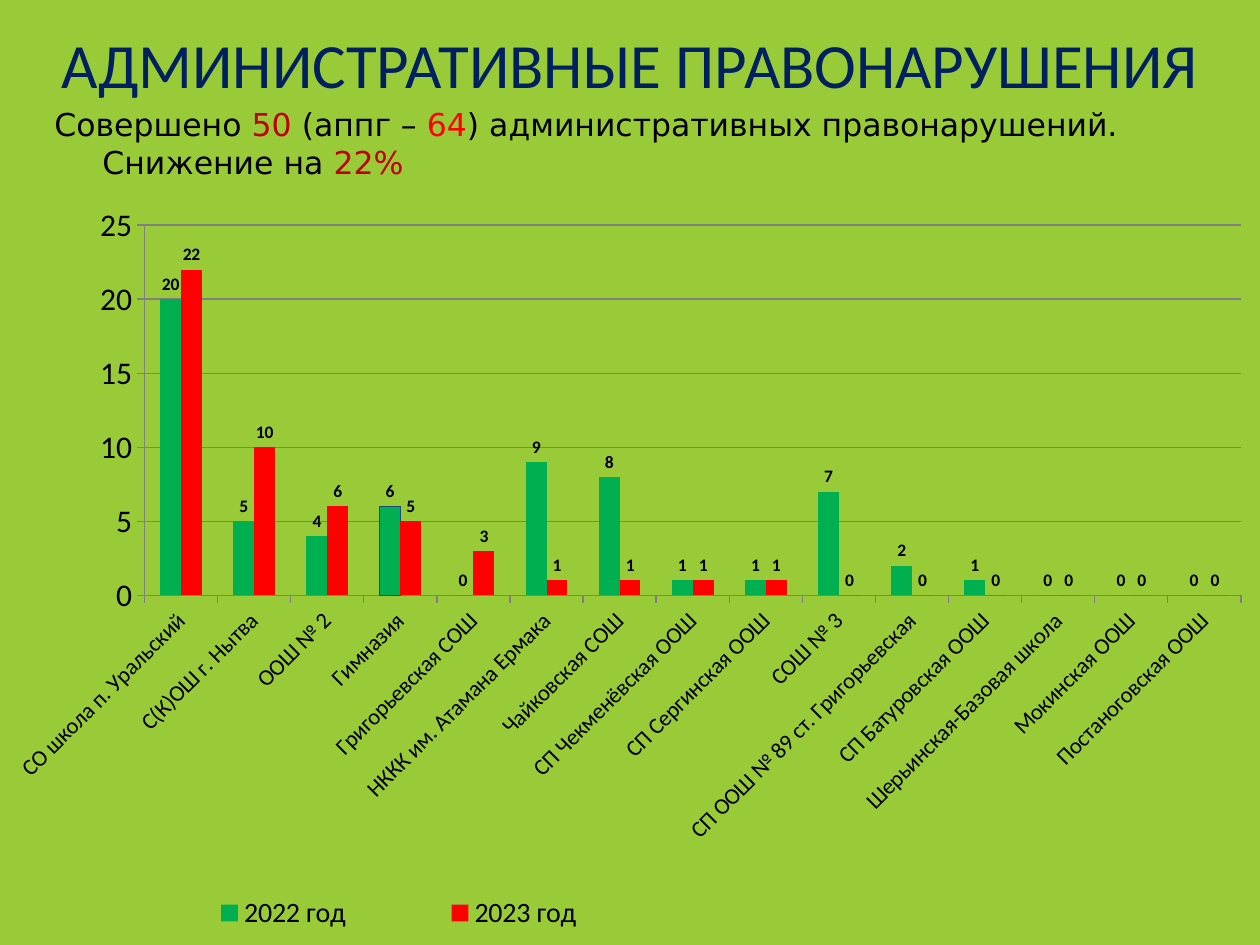
from dataclasses import dataclass

from lxml.etree import SubElement
from pptx import Presentation
from pptx.chart.data import CategoryChartData
from pptx.dml.color import RGBColor
from pptx.enum.chart import (XL_CHART_TYPE, XL_LABEL_POSITION,
                             XL_LEGEND_POSITION, XL_TICK_MARK)
from pptx.enum.text import MSO_ANCHOR, MSO_AUTO_SIZE, PP_ALIGN
from pptx.oxml import parse_xml
from pptx.oxml.ns import nsdecls, qn
from pptx.util import Pt

PX = 914400 / 126


@dataclass(frozen=True)
class Theme:
    """Colours, fonts and type sizes of the slide."""
    background: str = "99CB38"
    title: str = "002060"
    text: str = "000000"
    accent: str = "C00000"
    previous: str = "00B050"
    current: str = "FF0000"
    axis: str = "808080"
    outline: str = "1F497D"
    heading_font: str = "Calibri"
    body_font: str = "DejaVu Sans"
    title_size: int = 36
    body_size: int = 18
    legend_size: int = 16
    category_size: int = 13
    label_size: int = 10


THEME = Theme()

SCHOOLS = [
    ("СО школа п. Уральский", 20, 22),
    ("С(К)ОШ г. Нытва", 5, 10),
    ("ООШ № 2", 4, 6),
    ("Гимназия", 6, 5),
    ("Григорьевская СОШ", 0, 3),
    ("НККК им. Атамана Ермака", 9, 1),
    ("Чайковская СОШ", 8, 1),
    ("СП Чекменёвская ООШ", 1, 1),
    ("СП Сергинская ООШ", 1, 1),
    ("СОШ № 3", 7, 0),
    ("СП ООШ № 89 ст. Григорьевская", 2, 0),
    ("СП Батуровская ООШ", 1, 0),
    ("Шерьинская-Базовая школа", 0, 0),
    ("Мокинская ООШ", 0, 0),
    ("Постаноговская ООШ", 0, 0),
]


def px(*lengths):
    """Turn pixel lengths into EMU."""
    return [round(length * PX) for length in lengths]


def style_font(font, size, color=THEME.text, name=THEME.heading_font, bold=False):
    """Set the face, size, weight and colour of a font."""
    font.name, font.size, font.bold = name, Pt(size), bold
    font.color.rgb = RGBColor.from_string(color)


def fill_solid(fill, color):
    """Fill with one colour."""
    fill.solid()
    fill.fore_color.rgb = RGBColor.from_string(color)


def place_part(parent, index, x, y, width, height, inner=False):
    """Give a chart part a manual layout in fractions of the chart."""
    for old in parent.findall(qn("c:layout")):
        parent.remove(old)
    layout = parse_xml(f"<c:layout {nsdecls('c')}><c:manualLayout/></c:layout>")
    settings = [("layoutTarget", "inner")] if inner else []
    settings += [("xMode", "edge"), ("yMode", "edge"),
                 ("x", x), ("y", y), ("w", width), ("h", height)]
    for tag, value in settings:
        SubElement(layout[0], qn(f"c:{tag}")).set("val", str(value))
    parent.insert(index, layout)


def build_title(slide, box):
    """Place the title in its placeholder."""
    title = slide.shapes.title
    title.left, title.top, title.width, title.height = px(*box)
    frame = title.text_frame
    frame.word_wrap, frame.auto_size = True, MSO_AUTO_SIZE.NONE
    frame.vertical_anchor = MSO_ANCHOR.MIDDLE
    paragraph = frame.paragraphs[0]
    paragraph.alignment, paragraph.line_spacing = PP_ALIGN.CENTER, 0.9
    run = paragraph.add_run()
    run.text = "АДМИНИСТРАТИВНЫЕ ПРАВОНАРУШЕНИЯ"
    style_font(run.font, THEME.title_size, THEME.title)


def build_summary(slide, box):
    """Place the two-line summary with highlighted figures."""
    frame = slide.shapes.add_textbox(*px(*box)).text_frame
    frame.word_wrap = True
    frame.vertical_anchor = MSO_ANCHOR.MIDDLE
    paragraph = frame.paragraphs[0]
    indent, = px(48)
    properties = paragraph._p.get_or_add_pPr()
    properties.set("marL", str(indent))
    properties.set("indent", str(-indent))
    lines = [
        [("Совершено ", THEME.text), ("50 ", THEME.accent),
         ("(аппг – ", THEME.text), ("64", THEME.current),
         (") административных правонарушений.", THEME.text)],
        [("Снижение на ", THEME.text), ("22%", THEME.accent)],
    ]
    for number, line in enumerate(lines):
        if number:
            paragraph.add_line_break()
        for text, color in line:
            run = paragraph.add_run()
            run.text = text
            style_font(run.font, THEME.body_size, color, THEME.body_font)


def style_axes(chart):
    """Format both axes, the gridlines and the slanted school names."""
    category, value = chart.category_axis, chart.value_axis
    value.minimum_scale, value.maximum_scale, value.major_unit = 0, 25, 5
    value.has_major_gridlines = True
    for axis, size in ((category, THEME.category_size), (value, THEME.body_size)):
        axis.major_tick_mark = XL_TICK_MARK.OUTSIDE
        axis.minor_tick_mark = XL_TICK_MARK.NONE
        style_font(axis.tick_labels.font, size)
    for line in (category.format.line, value.format.line,
                 value.major_gridlines.format.line):
        line.color.rgb = RGBColor.from_string(THEME.axis)
        line.width = Pt(0.75)
    body = category._element.find(qn("c:txPr")).find(qn("a:bodyPr"))
    body.set("rot", "-2700000")
    body.set("vert", "horz")


def style_series(series, color):
    """Colour one year and label its columns."""
    fill_solid(series.format.fill, color)
    series.invert_if_negative = False
    labels = series.data_labels
    labels.show_value = True
    labels.position = XL_LABEL_POSITION.OUTSIDE_END
    style_font(labels.font, THEME.label_size, bold=True)


def build_chart(slide, box):
    """Place the column chart comparing two years by school."""
    names, previous, current = zip(*SCHOOLS)
    data = CategoryChartData()
    data.categories = names
    data.add_series("2022 год", previous)
    data.add_series("2023 год", current)
    chart = slide.shapes.add_chart(
        XL_CHART_TYPE.COLUMN_CLUSTERED, *px(*box), data).chart
    chart.has_title = False
    style_font(chart.font, THEME.body_size)
    plot = chart.plots[0]
    plot.gap_width, plot.overlap, plot.vary_by_categories = 150, 0, False
    for series, color in zip(plot.series, (THEME.previous, THEME.current)):
        style_series(series, color)
    gymnasium = plot.series[0].points[names.index("Гимназия")].format
    fill_solid(gymnasium.fill, THEME.previous)
    gymnasium.line.color.rgb = RGBColor.from_string(THEME.outline)
    style_axes(chart)
    chart.has_legend = True
    legend = chart.legend
    legend.position = XL_LEGEND_POSITION.BOTTOM
    legend.include_in_layout = False
    style_font(legend.font, THEME.legend_size)
    place_part(legend._element, 1, 0.1, 0.93, 0.44, 0.07)
    plot_area = chart._chartSpace.chart.plotArea
    place_part(plot_area, 0, 0.116, 0.038, 0.88, 0.499, inner=True)


def main():
    """Build and save the slide."""
    presentation = Presentation()
    presentation.slide_width, presentation.slide_height = px(1260, 945)
    slide = presentation.slides.add_slide(presentation.slide_layouts[5])
    fill_solid(slide.background.fill, THEME.background)
    build_title(slide, (0, 32, 1260, 73))
    build_chart(slide, (0, 197, 1246, 742))
    build_summary(slide, (42, 95, 1176, 95))
    presentation.save("out.pptx")


if __name__ == "__main__":
    main()
